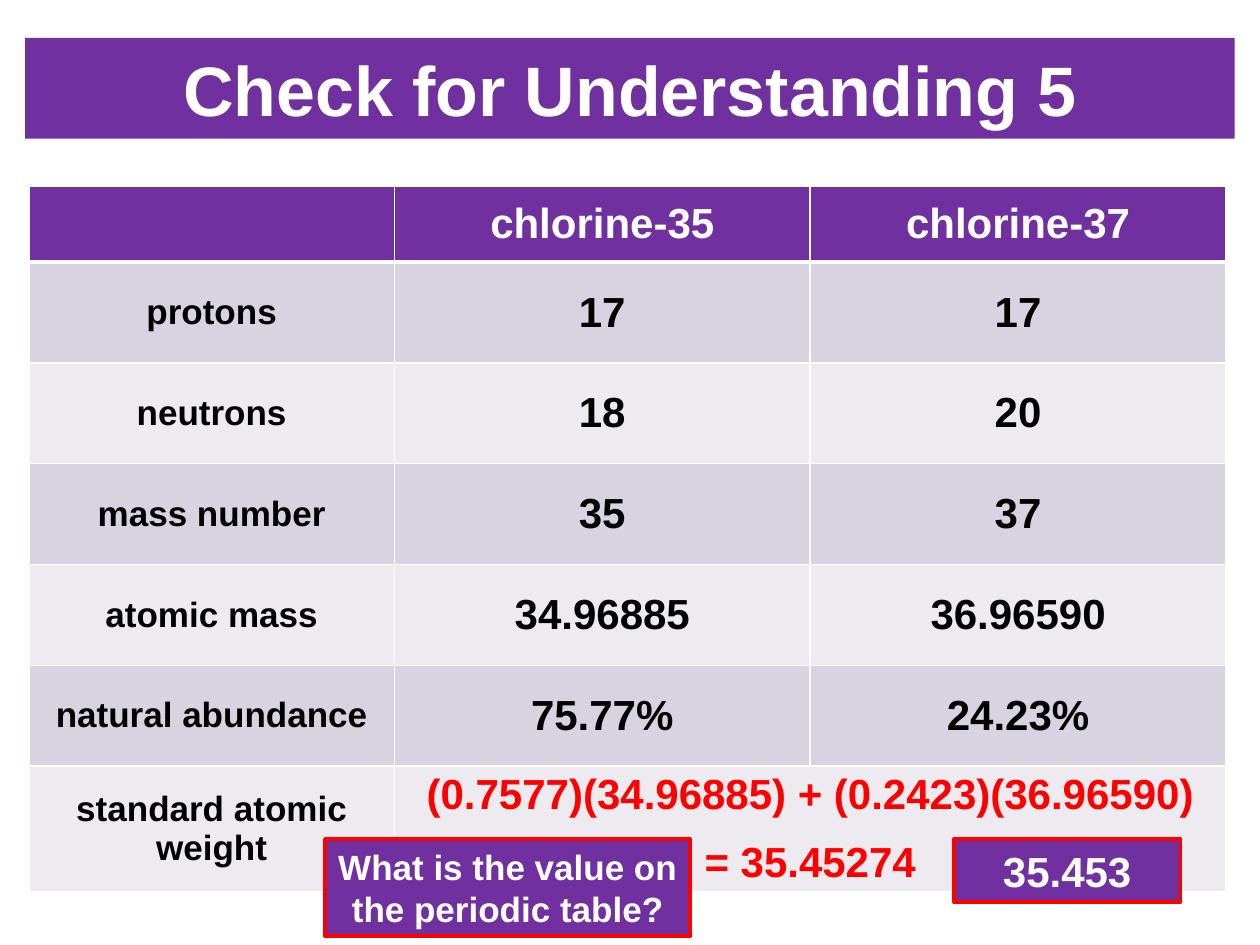
from dataclasses import dataclass

from lxml import etree
from pptx import Presentation
from pptx.dml.color import RGBColor
from pptx.enum.shapes import MSO_SHAPE
from pptx.enum.text import MSO_ANCHOR, PP_ALIGN
from pptx.oxml.ns import qn
from pptx.util import Inches, Pt

RECTANGLE = MSO_SHAPE.RECTANGLE
CENTER = PP_ALIGN.CENTER
TOP = MSO_ANCHOR.TOP
MIDDLE = MSO_ANCHOR.MIDDLE

FONT = "Arial"
PURPLE = "7030A0"
WHITE = "FFFFFF"
BLACK = "000000"
RED = "FF0000"
BANDS = ("EDEAF0", "D8D3E0")

COLUMN_WIDTHS = (2.9, 3.3, 3.3)
ROW_HEIGHTS = (0.6, 0.8, 0.8, 0.8, 0.8, 0.8, 1)
ISOTOPE_ROWS = (
    ("", "chlorine-35", "chlorine-37"),
    ("protons", "17", "17"),
    ("neutrons", "18", "20"),
    ("mass number", "35", "37"),
    ("atomic mass", "34.96885", "36.96590"),
    ("natural abundance", "75.77%", "24.23%"),
    ("standard atomic weight", "(0.7577)(34.96885) + (0.2423)(36.96590)\n= 35.45274", ""),
)


@dataclass
class Panel:
    text: str
    left: float
    top: float
    width: float
    height: float
    size: int
    outline: str = ""
    anchor: MSO_ANCHOR = MIDDLE


PANELS = (
    Panel("What is the value on the periodic table?", 2.58, 6.66, 2.9, 0.77, 20, RED, TOP),
    Panel("35.453", 7.57, 6.66, 1.8, 0.5, 24, RED),
)
TITLE = Panel("Check for Understanding 5", 0.2, 0.3, 9.6, 0.8, 40)


def paint(target, color: str) -> None:
    target.solid()
    target.fore_color.rgb = RGBColor.from_string(color)


def write(frame, text: str, size: int, color: str) -> None:
    for index, line in enumerate(text.split("\n")):
        para = frame.add_paragraph() if index else frame.paragraphs[0]
        para.alignment = CENTER
        para.space_before = Pt(12 if index else 0)
        if line:
            span = para.add_run()
            span.text = line
            span.font.name = FONT
            span.font.size = Pt(size)
            span.font.bold = True
            paint(span.font.fill, color)


def draw_panel(page, panel: Panel) -> None:
    box = page.shapes.add_shape(
        RECTANGLE, Inches(panel.left), Inches(panel.top),
        Inches(panel.width), Inches(panel.height),
    )
    box.shadow.inherit = False
    paint(box.fill, PURPLE)
    if panel.outline:
        paint(box.line.fill, panel.outline)
        box.line.width = Pt(2.25)
    else:
        box.line.fill.background()
    box.text_frame.word_wrap = True
    box.text_frame.vertical_anchor = panel.anchor
    write(box.text_frame, panel.text, panel.size, WHITE)


def draw_borders(cell, top: float, bottom: float) -> None:
    properties = cell._tc.get_or_add_tcPr()
    widths = {"a:lnL": 1, "a:lnR": 1, "a:lnT": top, "a:lnB": bottom}
    for position, (tag, width) in enumerate(widths.items()):
        line = etree.Element(qn(tag), w=str(Pt(width)))
        fill = etree.SubElement(line, qn("a:solidFill"))
        etree.SubElement(fill, qn("a:srgbClr"), val=WHITE)
        properties.insert(position, line)


def draw_table(page) -> None:
    table = page.shapes.add_table(
        len(ISOTOPE_ROWS), len(COLUMN_WIDTHS), Inches(0.23), Inches(1.48),
        Inches(sum(COLUMN_WIDTHS)), Inches(sum(ROW_HEIGHTS)),
    ).table
    for column, width in zip(table.columns, COLUMN_WIDTHS):
        column.width = Inches(width)
    for row, height in zip(table.rows, ROW_HEIGHTS):
        row.height = Inches(height)

    last = len(ISOTOPE_ROWS) - 1
    table.cell(last, 1).merge(table.cell(last, 2))
    for row_index, texts in enumerate(ISOTOPE_ROWS):
        header = row_index == 0
        for column_index, text in enumerate(texts):
            cell = table.cell(row_index, column_index)
            cell.vertical_anchor = MIDDLE
            cell.margin_top = cell.margin_bottom = Inches(0.03)
            paint(cell.fill, PURPLE if header else BANDS[row_index % 2])
            draw_borders(cell, 3 if row_index == 1 else 1, 3 if header else 1)
            if header:
                color = WHITE
            else:
                color = RED if row_index == last and column_index else BLACK
            size = 24 if header or column_index else 20
            write(cell.text_frame, text, size, color)


def main() -> None:
    deck = Presentation()
    deck.slide_width = Inches(10)
    deck.slide_height = Inches(7.5)
    page = deck.slides.add_slide(deck.slide_layouts[6])
    draw_panel(page, TITLE)
    draw_table(page)
    for panel in PANELS:
        draw_panel(page, panel)
    deck.save("out.pptx")


if __name__ == "__main__":
    main()
